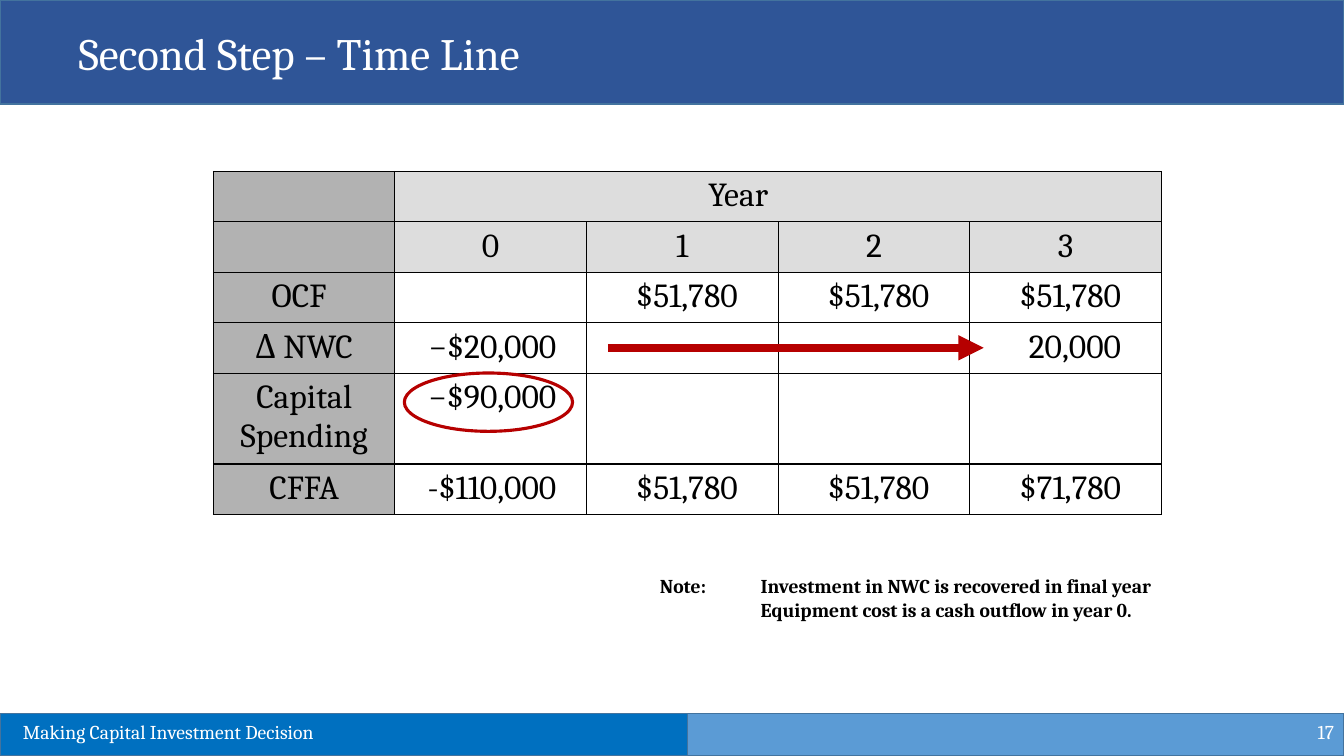
from lxml.etree import SubElement
from pptx import Presentation
from pptx.dml.color import RGBColor
from pptx.enum.shapes import MSO_CONNECTOR, MSO_SHAPE
from pptx.enum.text import MSO_ANCHOR as ANCHOR, PP_ALIGN as ALIGN
from pptx.oxml.ns import qn
from pptx.util import Cm, Pt

FONT = "Cambria"
WHITE, BLACK, RED = "FFFFFF", "000000", "B60000"
HEAD_FILL, LABEL_FILL = "DDDDDD", "B2B2B2"

COLS = [4.57] + [4.83] * 4
ROWS = [1.27] * 4 + [2.27, 1.27]
CASH_FLOWS = [
    ["", "", "Year", "", ""],
    ["", "0", "1", "2", "3"],
    ["OCF", "", "$51,780", "$51,780", "$51,780"],
    ["Δ NWC", "−$20,000", "", "", "20,000"],
    ["Capital Spending", "−$90,000", "", "", ""],
    ["CFFA", "-$110,000", "$51,780", "$51,780", "$71,780"],
]


def rgb(color):
    return RGBColor.from_string(color)


def box_cm(*lengths):
    return [Cm(v) for v in lengths]


def add_run(p, text, size, color, bold=False):
    r = p.add_run()
    r.text = text
    r.font.name, r.font.size, r.font.bold = FONT, Pt(size), bold
    r.font.color.rgb = rgb(color)


def add_text(s, box, text, size, color=WHITE, align=ALIGN.LEFT,
             anchor=ANCHOR.TOP, bold=False):
    """Add a wrapped text box, breaking the line at each newline."""
    tf = s.shapes.add_textbox(*box_cm(*box)).text_frame
    tf.word_wrap, tf.vertical_anchor = True, anchor
    p = tf.paragraphs[0]
    p.alignment = align
    for i, line in enumerate(text.split("\n")):
        if i:
            p.add_line_break()
        add_run(p, line, size, color, bold)
    return p


def add_band(s, box, fill):
    sp = s.shapes.add_shape(MSO_SHAPE.RECTANGLE, *box_cm(*box))
    sp.shadow.inherit = False
    sp.fill.solid()
    sp.fill.fore_color.rgb = rgb(fill)
    sp.line.color.rgb = rgb("43739E")
    sp.line.width = Pt(1)


def add_header(s, x, y, w, h):
    add_band(s, (x, y, w, h), "2F5597")
    add_text(s, (x + 1.73, y + 0.53, w - 3.19, 1.63),
             "Second Step – Time Line", 32)


def add_footer(s, x, y, w, h):
    split = 17.32
    add_band(s, (x, y, split, h), "0070C0")
    add_band(s, (x + split, y, w - split, h), "5B9BD5")
    add_text(s, (x + w - 7.62, y - 0.05, 7.62, 1.02), "17", 14,
             align=ALIGN.RIGHT, anchor=ANCHOR.MIDDLE)
    add_text(s, (x + 0.33, y + 0.03, 14.07, 0.86),
             "Making Capital Investment Decision", 14)


def set_borders(cell, hidden):
    """Draw a thin black line on each side of the cell not in hidden."""
    tcPr = cell._tc.get_or_add_tcPr()
    for side in "LRTB":
        ln = SubElement(tcPr, qn(f"a:ln{side}"), w=str(Pt(1)))
        if side in hidden:
            SubElement(ln, qn("a:noFill"))
        else:
            fill = SubElement(ln, qn("a:solidFill"))
            SubElement(fill, qn("a:srgbClr"), val=BLACK)


def style_cell(cell, row, col, text):
    hidden = ""
    if row == 0 and col:
        hidden = ("L" if col > 1 else "") + ("R" if col < 4 else "")
    set_borders(cell, hidden)
    cell.fill.solid()
    cell.fill.fore_color.rgb = rgb(
        LABEL_FILL if col == 0 else HEAD_FILL if row < 2 else WHITE)
    if not text:
        return
    p = cell.text_frame.paragraphs[0]
    p.alignment = ALIGN.CENTER if col == 0 or row == 1 else ALIGN.RIGHT
    if row > 1 and col:
        cell.margin_right = Cm(0.76 if col == 1 else 1.02)
    elif text == "OCF":
        cell.margin_right = Cm(0.51)
    add_run(p, text, 24, BLACK)


def add_time_line(s, x, y):
    """Add the cash flow table with its circled outflow and recovery arrow."""
    frame = s.shapes.add_table(len(ROWS), len(COLS),
                               *box_cm(x, y, sum(COLS), sum(ROWS)))
    table = frame.table
    table.first_row = table.horz_banding = False
    for column, width in zip(table.columns, COLS):
        column.width = Cm(width)
    for row, height in zip(table.rows, ROWS):
        row.height = Cm(height)
    for i, values in enumerate(CASH_FLOWS):
        for j, text in enumerate(values):
            style_cell(table.cell(i, j), i, j, text)

    left = [x + sum(COLS[:j]) for j in range(len(COLS))]
    top = [y + sum(ROWS[:i]) for i in range(len(ROWS))]
    ring = s.shapes.add_shape(MSO_SHAPE.OVAL,
                              *box_cm(left[1] + 0.24, top[4], 4.24, 1.47))
    ring.shadow.inherit = False
    ring.fill.background()
    ring.line.color.rgb = rgb(RED)
    ring.line.width = Pt(2.25)

    mid = top[3] + ROWS[3] / 2
    arrow = s.shapes.add_connector(
        MSO_CONNECTOR.STRAIGHT,
        *box_cm(left[2] + 0.54, mid, left[4] + 0.35, mid))
    arrow.line.color.rgb = rgb(RED)
    arrow.line.width = Pt(6)
    SubElement(arrow.line._get_or_add_ln(), qn("a:tailEnd"), type="triangle")
    SubElement(arrow._element.spPr, qn("a:effectLst"))


def add_note(s, *box):
    p = add_text(s, box,
                 "Note:\tInvestment in NWC is recovered in final year\n"
                 "Equipment cost is a cash outflow in year 0.",
                 14, BLACK, anchor=ANCHOR.MIDDLE, bold=True)
    pPr = p._p.get_or_add_pPr()
    pPr.set("marL", str(Cm(2.54)))
    pPr.set("indent", str(-Cm(2.54)))


def main():
    prs = Presentation()
    width, height = 33.87, 19.05
    prs.slide_width, prs.slide_height = Cm(width), Cm(height)
    s = prs.slides.add_slide(prs.slide_layouts[6])
    add_header(s, 0, 0, width, 2.62)
    add_footer(s, 0, height - 1.07, width, 1.07)
    add_time_line(s, 5.38, 4.32)
    add_note(s, 16.38, 13.69, 13.97, 2.74)
    prs.save("out.pptx")


if __name__ == "__main__":
    main()
